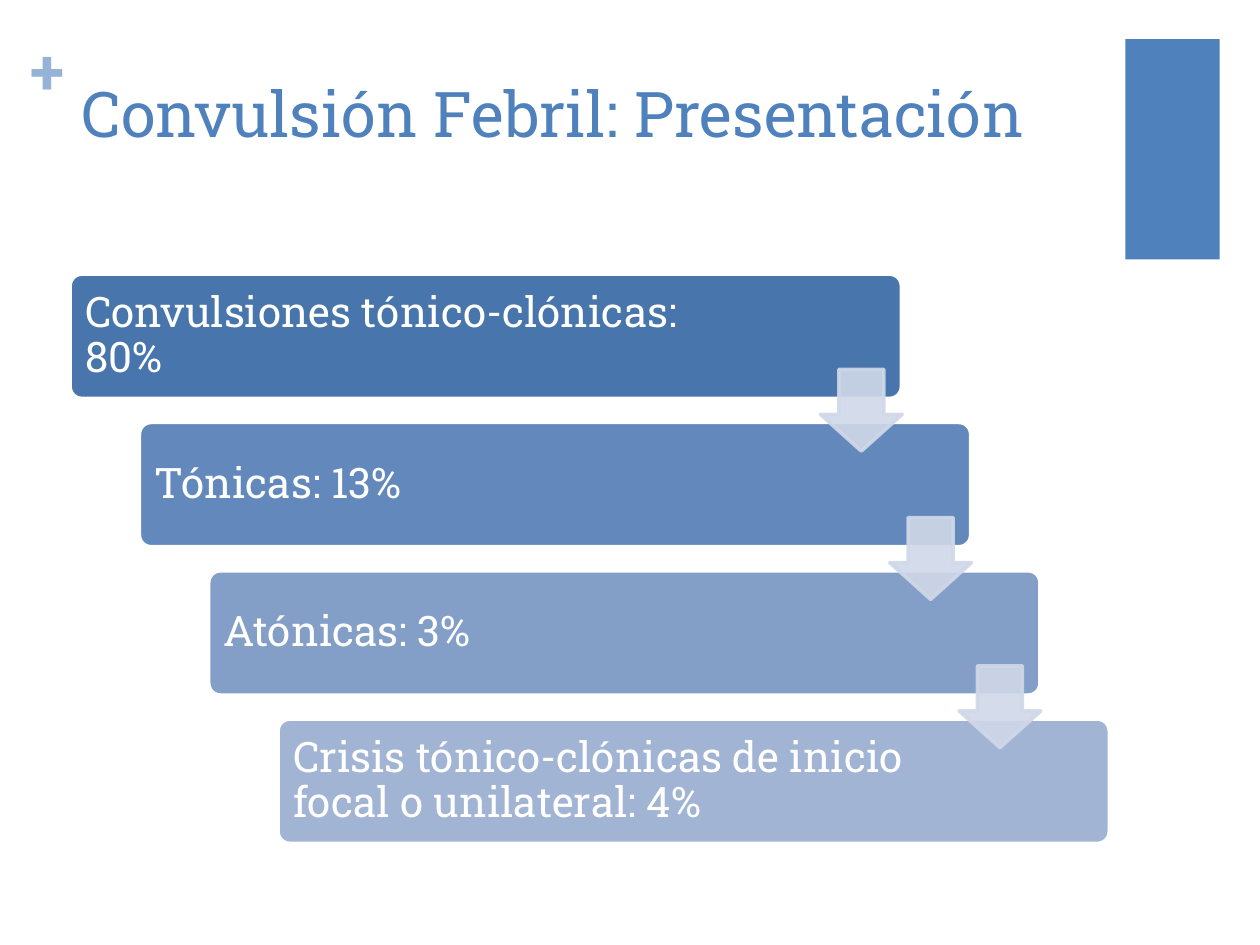
from pptx import Presentation
from pptx.dml.color import RGBColor
from pptx.enum.shapes import MSO_SHAPE as SHAPE
from pptx.enum.text import MSO_ANCHOR as ANCHOR, MSO_AUTO_SIZE as AUTO, PP_ALIGN as ALIGN
from pptx.oxml.ns import qn
from pptx.util import Pt
from lxml import etree

FONT = "Roboto Slab"
BLUE = "4F81BD"
DX, DY = 39.6, 84.75
STEPS = [
    ("Convulsiones tónico-clónicas: 80%", "4875AC"),
    ("Tónicas: 13%", "6389BC"),
    ("Atónicas: 3%", "839EC7"),
    ("Crisis tónico-clónicas de inicio focal o unilateral: 4%", "A2B4D4"),
]


def color(hex_str):
    return RGBColor.from_string(hex_str)


def write(tf, text, size=24, fill="FFFFFF", bold=False, anchor=ANCHOR.MIDDLE,
          insets=(7.2, 3.6, 7.2, 3.6), spacing=None, after=None):
    tf.word_wrap = True
    tf.auto_size = AUTO.NONE
    tf.vertical_anchor = anchor
    tf.margin_left, tf.margin_top, tf.margin_right, tf.margin_bottom = map(Pt, insets)
    p = tf.paragraphs[0]
    p.alignment = ALIGN.LEFT
    if spacing is not None:
        p.line_spacing = spacing
    if after is not None:
        p.space_after = Pt(after)
    r = p.add_run()
    r.text = text
    r.font.name, r.font.size, r.font.bold = FONT, Pt(size), bold
    r.font.color.rgb = color(fill)


def add_box(s, kind, x, y, w, h, fill, line=None, width=0, adj=()):
    sp = s.shapes.add_shape(kind, Pt(x), Pt(y), Pt(w), Pt(h))
    sp.shadow.inherit = False
    for i, value in enumerate(adj):
        sp.adjustments[i] = value
    sp.fill.solid()
    sp.fill.fore_color.rgb = color(fill)
    if line:
        sp.line.color.rgb = color(line)
        sp.line.width = Pt(width)
    else:
        sp.line.fill.background()
    return sp


def set_opacity(sp, percent):
    for clr in sp._element.spPr.iter(qn("a:srgbClr")):
        etree.SubElement(clr, qn("a:alpha")).set("val", str(percent * 1000))


def add_title(s, text):
    sp = s.shapes.title
    sp.left, sp.top, sp.width, sp.height = Pt(39.6), Pt(10.8), Pt(594.7), Pt(78.5)
    write(sp.text_frame, text, size=36, fill=BLUE, anchor=ANCHOR.BOTTOM)


def add_plus(s):
    sp = s.shapes.add_textbox(Pt(17.3), Pt(18), Pt(20.9), Pt(43.9))
    write(sp.text_frame, "+", size=36, fill="95B3D7", bold=True,
          anchor=ANCHOR.TOP, insets=(0, 0, 0, 0))


def add_step(s, i, text, fill):
    sp = add_box(s, SHAPE.ROUNDED_RECTANGLE, 39.6 + i * DX, 156.2 + i * DY, 476, 72,
                 fill, line="FFFFFF", width=3, adj=(0.1,))
    write(sp.text_frame, text, insets=(7.2, 7.2, 94, 7.2), spacing=0.9, after=8.4)


def add_arrow(s, i):
    sp = add_box(s, SHAPE.DOWN_ARROW, 468.8 + i * DX, 211 + i * DY, 46.8, 46.8,
                 "D0D8E8", line="D0D8E8", width=2, adj=(0.55, 0.45))
    set_opacity(sp, 90)


def main():
    prs = Presentation()
    prs.slide_width, prs.slide_height = Pt(720), Pt(540)
    s = prs.slides.add_slide(prs.slide_layouts[5])
    add_box(s, SHAPE.RECTANGLE, 643, 22.3, 54, 126, BLUE)
    add_plus(s)
    add_title(s, "Convulsión Febril: Presentación")
    for i, (text, fill) in enumerate(STEPS):
        add_step(s, i, text, fill)
    for i in range(len(STEPS) - 1):
        add_arrow(s, i)
    prs.save("out.pptx")


if __name__ == "__main__":
    main()
